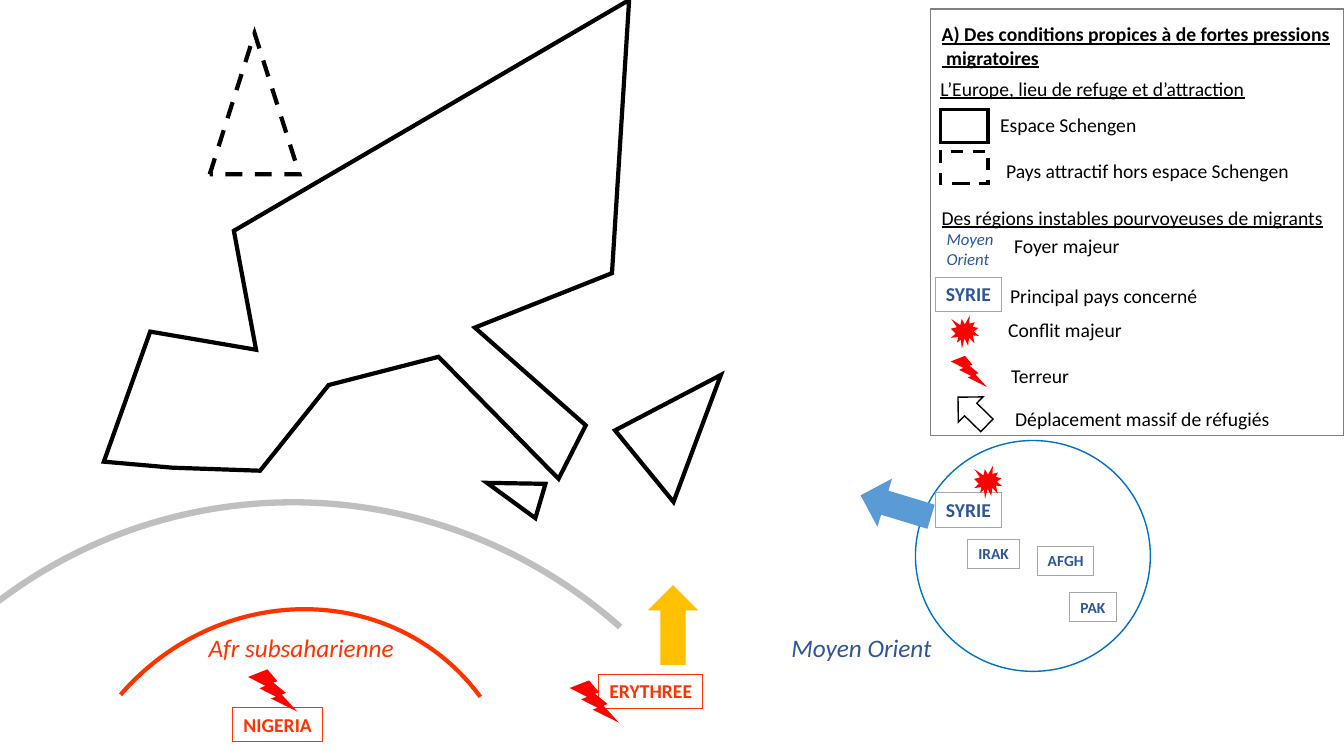
from lxml.etree import SubElement
from pptx import Presentation
from pptx.dml.color import RGBColor
from pptx.enum.dml import MSO_LINE
from pptx.enum.shapes import MSO_SHAPE
from pptx.enum.text import MSO_ANCHOR, MSO_AUTO_SIZE, PP_ALIGN
from pptx.oxml.ns import qn
from pptx.util import Pt

PX = 9144  # 100 px per inch
BLACK = RGBColor(0x00, 0x00, 0x00)
GREY = RGBColor(0x80, 0x80, 0x80)
LABEL_GREY = RGBColor(0xA6, 0xA6, 0xA6)
ARC_GREY = RGBColor(0xBF, 0xBF, 0xBF)
NAVY = RGBColor(0x2F, 0x55, 0x97)
BLUE = RGBColor(0x00, 0x70, 0xC0)
ARROW_BLUE = RGBColor(0x5B, 0x9B, 0xD5)
ORANGE = RGBColor(0xFF, 0x33, 0x00)
GOLD = RGBColor(0xFF, 0xC0, 0x00)
RED = RGBColor(0xFF, 0x00, 0x00)


def paint(sp, fill=None, line=None, width=1, dash=False):
    sp.shadow.inherit = False
    if fill is None:
        sp.fill.background()
    else:
        sp.fill.solid()
        sp.fill.fore_color.rgb = fill
    if line is None:
        sp.line.fill.background()
        return
    sp.line.color.rgb = line
    sp.line.width = Pt(width)
    if dash:
        sp.line.dash_style = MSO_LINE.DASH
    SubElement(sp.line._get_or_add_ln(), qn("a:miter"), lim="800000")


def write(sp, text, size, color, bold=False, italic=False, underline=False,
          align=PP_ALIGN.LEFT, wrap=False):
    tf = sp.text_frame
    tf.text = text
    tf.word_wrap = wrap
    tf.auto_size = MSO_AUTO_SIZE.SHAPE_TO_FIT_TEXT
    tf.vertical_anchor = MSO_ANCHOR.TOP
    for p in tf.paragraphs:
        p.alignment = align
        for r in p.runs:
            r.font.name = "Calibri"
            r.font.size = Pt(size)
            r.font.color.rgb = color
            r.font.bold = bold
            r.font.italic = italic
            r.font.underline = underline


prs = Presentation()
prs.slide_width, prs.slide_height = 1333 * PX, 750 * PX
s = prs.slides.add_slide(prs.slide_layouts[5])

# Legend title
title = s.shapes.title
title.left, title.top, title.width, title.height = [
    v * PX for v in (924, 17, 408, 57)]
write(title, "A) Des conditions propices à de fortes pressions\n migratoires",
      14, BLACK, bold=True, underline=True)

# Solid outlines on the map
outlines = [
    [(103, 458), (149, 329), (254, 347), (232, 229), (624, 0), (607, 271),
     (471, 325), (581, 422), (554, 475), (435, 354), (326, 382), (258, 467),
     (171, 464)],
    [(483, 479), (541, 480), (531, 514)],
    [(610, 427), (715, 372), (668, 498)],
]
for points in outlines:
    builder = s.shapes.build_freeform(*points[0], scale=PX)
    builder.add_line_segments(points[1:], close=True)
    paint(builder.convert_to_shape(), line=BLACK, width=3)

# Arcs: frame, rotation, start and end, line
arcs = [
    ((-191, 497, 969, 975), 318.8, (164.39, 211.67), ARC_GREY, 4.5),
    ((56, 610, 467, 442), 318.1, (157.05, 3.06), ORANGE, 3),
]
for frame, rotation, ends, color, width in arcs:
    sp = s.shapes.add_shape(MSO_SHAPE.ARC, *[v * PX for v in frame])
    sp.rotation = rotation
    sp.adjustments[0], sp.adjustments[1] = ends
    paint(sp, line=color, width=width)

# Outlined shapes: map and legend
outlined = [
    (MSO_SHAPE.ISOSCELES_TRIANGLE, (208, 33, 89, 140), 0, BLACK, 3, True),
    (MSO_SHAPE.FLOWCHART_CONNECTOR, (908, 437, 233, 229), 0, BLUE, 1, False),
    (MSO_SHAPE.RECTANGLE, (923, 9, 410, 423), 0, GREY, 1, False),
    (MSO_SHAPE.RECTANGLE, (933, 109, 47, 32), 0, BLACK, 2.25, False),
    (MSO_SHAPE.RECTANGLE, (933, 150, 47, 32), 0, BLACK, 2.25, True),
    (MSO_SHAPE.DOWN_ARROW, (947, 388, 35, 40), 134.3, BLACK, 1, False),
]
for kind, frame, rotation, color, width, dash in outlined:
    sp = s.shapes.add_shape(kind, *[v * PX for v in frame])
    sp.rotation = rotation
    paint(sp, line=color, width=width, dash=dash)

# Framed labels
labels = [
    ("SYRIE", (928, 489, 65, 34), 14, NAVY, LABEL_GREY),
    ("IRAK", (960, 535, 51, 29), 11, NAVY, LABEL_GREY),
    ("AFGH", (1029, 542, 56, 29), 11, NAVY, LABEL_GREY),
    ("PAK", (1061, 588, 46, 29), 11, NAVY, LABEL_GREY),
    ("NIGERIA", (231, 702, 89, 34), 14, ORANGE, ORANGE),
    ("ERYTHREE", (594, 669, 103, 34), 14, ORANGE, ORANGE),
    ("SYRIE", (928, 275, 65, 34), 14, NAVY, LABEL_GREY),
]
for text, frame, size, color, border in labels:
    sp = s.shapes.add_shape(MSO_SHAPE.RECTANGLE, *[v * PX for v in frame])
    paint(sp, line=border, width=0.75)
    write(sp, text, size, color, bold=True, align=PP_ALIGN.CENTER)

# Filled symbols: arrows, bursts and bolts
symbols = [
    (MSO_SHAPE.RIGHT_ARROW, (852, 477, 73, 50), 196.9, ARROW_BLUE),
    (MSO_SHAPE.RIGHT_ARROW, (628, 595, 79, 50), 270, GOLD),
    (MSO_SHAPE.EXPLOSION1, (943, 313, 28, 33), 0, RED),
    (MSO_SHAPE.EXPLOSION1, (966, 462, 28, 33), 0, RED),
    (MSO_SHAPE.LIGHTNING_BOLT, (565, 675, 49, 42), 0, RED),
    (MSO_SHAPE.LIGHTNING_BOLT, (246, 664, 49, 42), 0, RED),
    (MSO_SHAPE.LIGHTNING_BOLT, (943, 353, 36, 31), 0, RED),
]
for kind, frame, rotation, color in symbols:
    sp = s.shapes.add_shape(kind, *[v * PX for v in frame])
    sp.rotation = rotation
    paint(sp, fill=color)

# Italic labels
regions = [
    ("Moyen Orient", (775, 622, 163, 40), 18, NAVY),
    ("Afr subsaharienne", (197, 622, 207, 40), 18, ORANGE),
    ("Moyen\nOrient", (929, 222, 71, 50), 12, NAVY),
]
for text, frame, size, color in regions:
    sp = s.shapes.add_textbox(*[v * PX for v in frame])
    write(sp, text, size, color, italic=True)

# Legend subtitles
subtitles = [
    ("L’Europe, lieu de refuge et d’attraction", (923, 71, 330, 34), False),
    ("Des régions instables pourvoyeuses de migrants", (924, 199, 410, 34), True),
]
for text, frame, wrap in subtitles:
    sp = s.shapes.add_textbox(*[v * PX for v in frame])
    write(sp, text, 14, BLACK, underline=True, wrap=wrap)

# Legend entries: left, top, width
entries = [
    ("Espace Schengen", 982, 107, 157),
    ("Pays attractif hors espace Schengen", 988, 153, 304),
    ("Foyer majeur", 996, 227, 126),
    ("Principal pays concerné", 992, 277, 215),
    ("Conflit majeur", 990, 310, 134),
    ("Terreur", 993, 356, 78),
    ("Déplacement massif de réfugiés", 997, 399, 275),
]
for text, left, top, width in entries:
    sp = s.shapes.add_textbox(left * PX, top * PX, width * PX, 34 * PX)
    write(sp, text, 14, BLACK)

prs.save("out.pptx")
